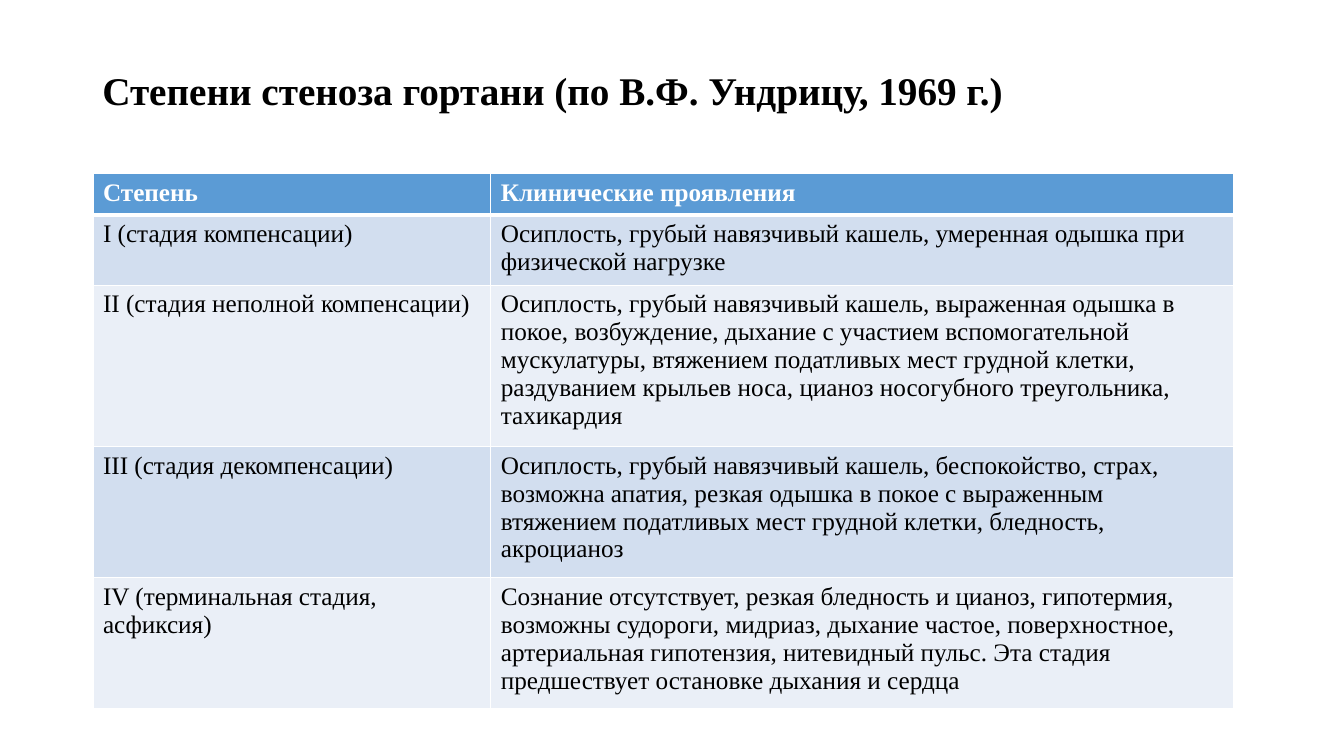
from dataclasses import dataclass

from lxml import etree
from pptx import Presentation
from pptx.dml.color import RGBColor
from pptx.enum.text import MSO_ANCHOR
from pptx.oxml.ns import qn
from pptx.slide import Slide
from pptx.table import Table, _Cell
from pptx.text.text import _Paragraph
from pptx.util import Pt

MIDDLE = MSO_ANCHOR.MIDDLE


@dataclass(frozen=True)
class Theme:
    font: str = "Times New Roman"
    title_size: float = 28
    table_size: float = 18
    text: str = "000000"
    header_text: str = "FFFFFF"
    header_fill: str = "5B9BD5"
    bands: tuple[str, str] = ("D2DEEF", "EAEFF7")
    border: str = "FFFFFF"
    thin: float = 1
    thick: float = 3


@dataclass(frozen=True)
class StenosisRow:
    degree: str
    signs: str
    height: float


THEME = Theme()
TITLE = "Степени стеноза гортани (по В.Ф. Ундрицу, 1969 г.)"
ROWS = [
    StenosisRow("Степень", "Клинические проявления", 29.25),
    StenosisRow(
        "I (стадия компенсации)",
        "Осиплость, грубый навязчивый кашель, умеренная одышка при "
        "физической нагрузке",
        46.5,
    ),
    StenosisRow(
        "II (стадия неполной компенсации)",
        "Осиплость, грубый навязчивый кашель, выраженная одышка в покое, "
        "возбуждение, дыхание с участием вспомогательной мускулатуры, "
        "втяжением податливых мест грудной клетки, раздуванием крыльев носа, "
        "цианоз носогубного треугольника, тахикардия",
        107,
    ),
    StenosisRow(
        "III (стадия декомпенсации)",
        "Осиплость, грубый навязчивый кашель, беспокойство, страх, возможна "
        "апатия, резкая одышка в покое с выраженным втяжением податливых мест "
        "грудной клетки, бледность, акроцианоз",
        86.5,
    ),
    StenosisRow(
        "IV (терминальная стадия, асфиксия)",
        "Сознание отсутствует, резкая бледность и цианоз, гипотермия, возможны "
        "судороги, мидриаз, дыхание частое, поверхностное, артериальная "
        "гипотензия, нитевидный пульс. Эта стадия предшествует остановке "
        "дыхания и сердца",
        86.5,
    ),
]
COLUMN_WIDTHS = (284.2, 530.8)


def set_font(paragraph: _Paragraph, size: float, color: str, bold: bool) -> None:
    font = paragraph.font
    font.name = THEME.font
    font.size = Pt(size)
    font.bold = bold
    font.color.rgb = RGBColor.from_string(color)


def add_title(slide: Slide) -> None:
    frame = slide.shapes.add_textbox(Pt(66), Pt(28.8), Pt(828), Pt(104.4)).text_frame
    frame.word_wrap = True
    frame.vertical_anchor = MIDDLE
    # The deep bottom inset lifts the title above the middle of its box
    frame.margin_bottom = Pt(33)
    heading = frame.paragraphs[0]
    heading.text = TITLE
    heading.line_spacing = 0.9
    set_font(heading, THEME.title_size, THEME.text, True)


def set_borders(cell: _Cell, top: float, bottom: float) -> None:
    properties = cell._tc.get_or_add_tcPr()
    widths = {"a:lnL": THEME.thin, "a:lnR": THEME.thin, "a:lnT": top, "a:lnB": bottom}
    for tag, width in widths.items():
        line = etree.SubElement(properties, qn(tag), w=str(Pt(width)))
        fill = etree.SubElement(line, qn("a:solidFill"))
        etree.SubElement(fill, qn("a:srgbClr"), val=THEME.border)


def fill_row(table: Table, index: int, content: StenosisRow) -> None:
    is_header = index == 0
    fill = THEME.header_fill if is_header else THEME.bands[(index - 1) % 2]
    color = THEME.header_text if is_header else THEME.text
    top = THEME.thick if index == 1 else THEME.thin
    bottom = THEME.thick if is_header else THEME.thin
    table.rows[index].height = Pt(content.height)
    for column, text in enumerate((content.degree, content.signs)):
        cell = table.cell(index, column)
        cell.text = text
        set_font(cell.text_frame.paragraphs[0], THEME.table_size, color, is_header)
        set_borders(cell, top, bottom)
        cell.fill.solid()
        cell.fill.fore_color.rgb = RGBColor.from_string(fill)


def add_stenosis_table(slide: Slide) -> None:
    height = sum(row.height for row in ROWS)
    table = slide.shapes.add_table(
        len(ROWS), len(COLUMN_WIDTHS), Pt(66.4), Pt(124.2),
        Pt(sum(COLUMN_WIDTHS)), Pt(height),
    ).table
    for column, width in zip(table.columns, COLUMN_WIDTHS):
        column.width = Pt(width)
    for index, content in enumerate(ROWS):
        fill_row(table, index, content)


def main() -> None:
    presentation = Presentation()
    presentation.slide_width = Pt(960)
    presentation.slide_height = Pt(540)
    slide = presentation.slides.add_slide(presentation.slide_layouts[6])
    # Heading
    add_title(slide)
    # Degrees and their clinical signs
    add_stenosis_table(slide)
    presentation.save("out.pptx")


if __name__ == "__main__":
    main()
